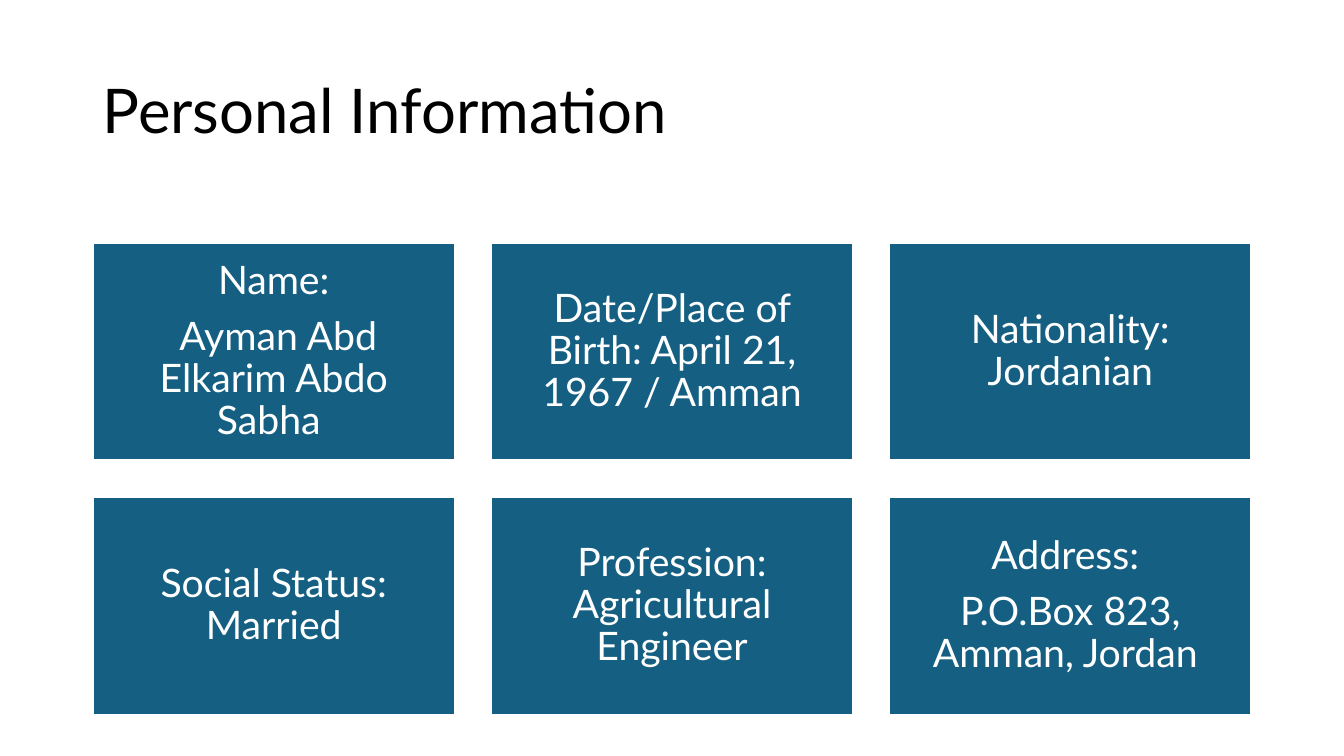
"""Builds the personal information slide with its grid of fact cards."""
from pptx import Presentation
from pptx.dml.color import RGBColor
from pptx.enum import shapes, text
from pptx.util import Inches, Pt

COLORS = {"ink": "000000", "card": "156082", "paper": "FFFFFF"}
FACTS = [
    ["Name:", " Ayman Abd Elkarim Abdo Sabha "],
    ["Date/Place of Birth: April 21, 1967 / Amman"],
    ["Nationality: Jordanian"],
    ["Social Status: Married"],
    ["Profession: Agricultural Engineer"],
    ["Address: ", "P.O.Box 823, Amman, Jordan "],
]
COLUMNS = 3
LEFT, TOP = 0.92, 2.41
CARD_WIDTH, CARD_HEIGHT = 3.59, 2.16
GAP = 0.36


def write(frame, lines, size, color, align, after=0):
    frame.word_wrap = True
    frame.auto_size = text.MSO_AUTO_SIZE.NONE
    frame.vertical_anchor = text.MSO_ANCHOR.MIDDLE
    for index, line in enumerate(lines):
        paragraph = frame.add_paragraph() if index else frame.paragraphs[0]
        paragraph.alignment = align
        paragraph.line_spacing = 0.9
        paragraph.space_before = Pt(0)
        paragraph.space_after = Pt(after)
        run = paragraph.add_run()
        run.text = line
        run.font.name = "Lato"
        run.font.size = Pt(size)
        run.font.color.rgb = RGBColor.from_string(COLORS[color])


class FactSlide:
    def __init__(self, deck):
        self.slide = deck.slides.add_slide(deck.slide_layouts[5])

    def title(self, heading):
        title = self.slide.shapes.title
        title.left, title.top = Inches(LEFT), Inches(0.4)
        title.width, title.height = Inches(11.5), Inches(1.45)
        write(title.text_frame, [heading], 44, "ink", text.PP_ALIGN.LEFT)

    def card(self, left, top, lines):
        card = self.slide.shapes.add_shape(
            shapes.MSO_SHAPE.RECTANGLE, Inches(left), Inches(top),
            Inches(CARD_WIDTH), Inches(CARD_HEIGHT))
        card.shadow.inherit = False
        card.fill.solid()
        card.fill.fore_color.rgb = RGBColor.from_string(COLORS["card"])
        card.line.color.rgb = RGBColor.from_string(COLORS["paper"])
        card.line.width = Pt(1.5)
        frame = card.text_frame
        frame.margin_left = frame.margin_right = Inches(0.12)
        frame.margin_top = frame.margin_bottom = Inches(0.12)
        write(frame, lines, 28, "paper", text.PP_ALIGN.CENTER, after=9.8)


def main():
    deck = Presentation()
    deck.slide_width, deck.slide_height = Inches(13.33), Inches(7.5)
    personal = FactSlide(deck)
    personal.title("Personal Information")
    for index, lines in enumerate(FACTS):
        row, column = divmod(index, COLUMNS)
        personal.card(LEFT + column * (CARD_WIDTH + GAP),
                      TOP + row * (CARD_HEIGHT + GAP), lines)
    deck.save("out.pptx")


if __name__ == "__main__":
    main()
